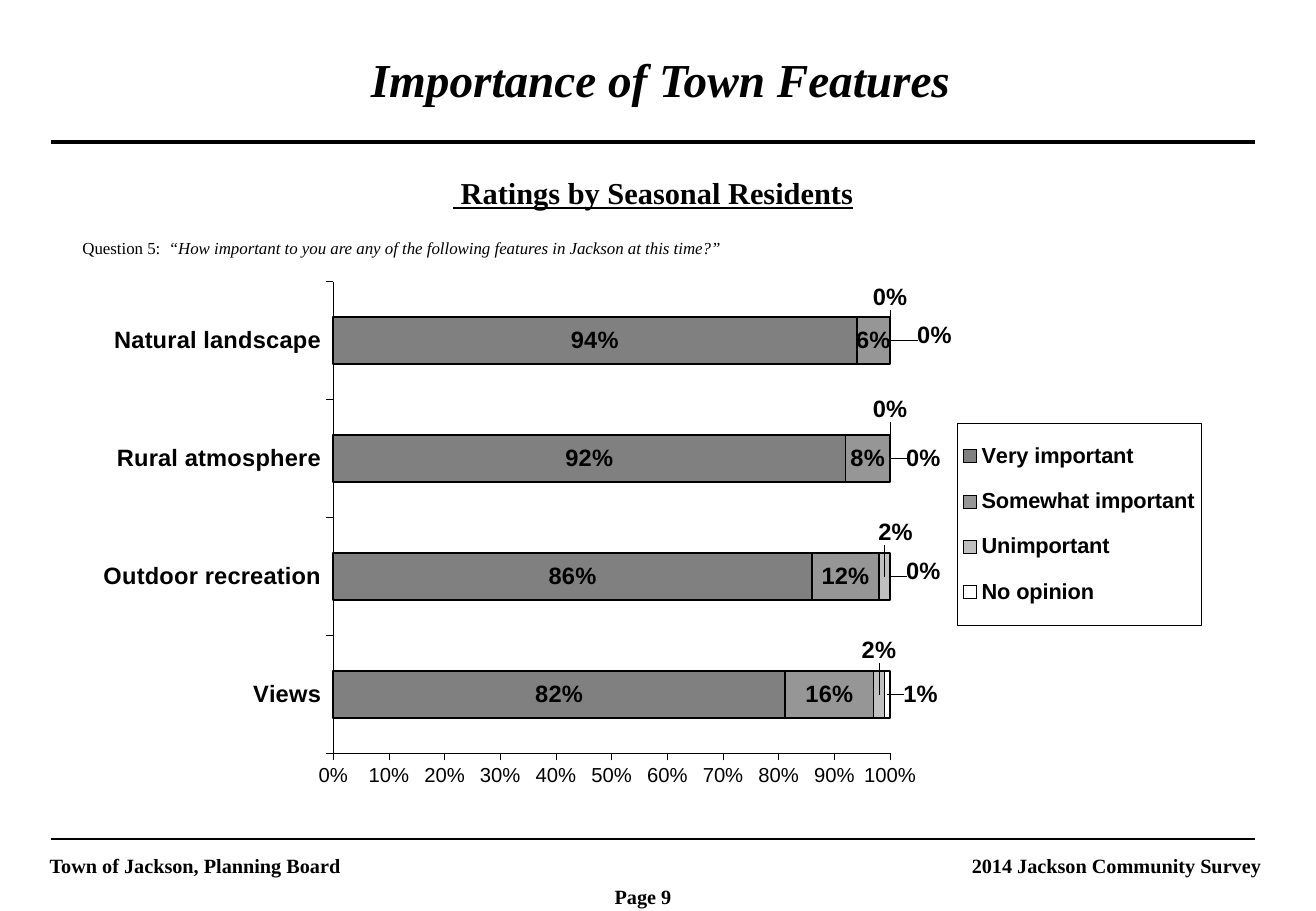
from lxml import etree
from pptx import Presentation
from pptx.chart.data import CategoryChartData
from pptx.dml.color import RGBColor
from pptx.enum.chart import XL_CHART_TYPE, XL_LEGEND_POSITION, XL_TICK_MARK
from pptx.enum.shapes import MSO_CONNECTOR
from pptx.enum.text import PP_ALIGN
from pptx.oxml import parse_xml
from pptx.oxml.ns import qn
from pptx.util import Inches, Pt

BLACK = RGBColor(0, 0, 0)
STACKED_BAR = XL_CHART_TYPE.BAR_STACKED_100
LEGEND_RIGHT = XL_LEGEND_POSITION.RIGHT
TICK_OUTSIDE, TICK_NONE = XL_TICK_MARK.OUTSIDE, XL_TICK_MARK.NONE
STRAIGHT = MSO_CONNECTOR.STRAIGHT
LEFT, CENTER, RIGHT = PP_ALIGN.LEFT, PP_ALIGN.CENTER, PP_ALIGN.RIGHT
SERIF, SANS = "Times New Roman", "Arial"
CHART_NAMESPACE = "http://schemas.openxmlformats.org/drawingml/2006/chart"

FEATURES = ["Views", "Outdoor recreation", "Rural atmosphere", "Natural landscape"]
# name, shares, fill, label offsets as fractions of the chart (none: centred)
RATINGS = [
    ("Very important", (0.82, 0.86, 0.92, 0.94), RGBColor(0x80, 0x80, 0x80), ()),
    ("Somewhat important", (0.16, 0.12, 0.08, 0.06), RGBColor(0x96, 0x96, 0x96), ()),
    ("Unimportant", (0.02, 0.02, 0, 0), RGBColor(0xC0, 0xC0, 0xC0),
     ((0, -0.08), (0.01, -0.08), (0, -0.09), (0, -0.08))),
    ("No opinion", (0.01, 0, 0, 0), RGBColor(0xFF, 0xFF, 0xFF),
     ((0.03, 0), (0.03, -0.01), (0.03, 0), (0.04, -0.01))),
]


def style_font(font, name, size, bold=False, italic=False):
    font.name, font.size = name, Pt(size)
    font.bold, font.italic = bold, italic
    font.color.rgb = BLACK


def add_text(slide, box, text, size, align=LEFT, bold=True, italic=False):
    shape = slide.shapes.add_textbox(*map(Inches, box))
    shape.text_frame.word_wrap = True
    paragraph = shape.text_frame.paragraphs[0]
    paragraph.text = text
    paragraph.alignment, paragraph.line_spacing = align, 0.9
    style_font(paragraph.runs[0].font, SERIF, size, bold, italic)
    return paragraph


def add_rule(slide, left, top, width, weight):
    rule = slide.shapes.add_connector(
        STRAIGHT, Inches(left), Inches(top), Inches(left + width), Inches(top))
    rule.line.color.rgb, rule.line.width = BLACK, Pt(weight)
    etree.SubElement(rule._element.spPr, qn("a:effectLst"))


def add_header(slide, left, top, width):
    add_text(slide, (left + 0.06, top, width, 0.52), "Importance of Town Features",
             28, CENTER, italic=True)
    add_rule(slide, left, top + 0.75, width, 2)
    subtitle = add_text(slide, (left, top + 1, width, 0.37),
                        " Ratings by Seasonal Residents", 18, CENTER)
    subtitle.runs[0].font.underline = True
    question = add_text(slide, (left + 0.16, top + 1.51, 9.08, 0.25),
                        "Question 5:  ", 10, bold=False)
    quote = question.add_run()
    quote.text = "“How important to you are any of the following features in Jackson at this time?”"
    style_font(quote.font, SERIF, 10, italic=True)


def add_footer(slide, left, top, width):
    add_rule(slide, left, top, width, 1)
    add_text(slide, (left - 0.11, top + 0.09, 3.92, 0.28),
             "Town of Jackson, Planning Board", 12)
    add_text(slide, (left + width - 3.52, top + 0.09, 3.67, 0.28),
             "2014 Jackson Community Survey", 12, RIGHT)
    add_text(slide, (left + 4.54, top + 0.34, 0.92, 0.28), "Page 9", 12)


def manual_layout(x, y, width=None, height=None, inner=False, from_edge=True):
    """Return a c:layout whose lengths are fractions of the chart."""
    parts = [("layoutTarget", "inner")] if inner else []
    if from_edge:
        parts += [("xMode", "edge"), ("yMode", "edge")]
    parts += [("x", x), ("y", y)]
    if width:
        parts += [("w", width), ("h", height)]
    body = "".join(f'<c:{name} val="{value}"/>' for name, value in parts)
    return parse_xml(f'<c:layout xmlns:c="{CHART_NAMESPACE}">'
                     f"<c:manualLayout>{body}</c:manualLayout></c:layout>")


def style_axis(axis, size, bold):
    axis.has_major_gridlines = False
    axis.major_tick_mark, axis.minor_tick_mark = TICK_OUTSIDE, TICK_NONE
    axis.format.line.color.rgb, axis.format.line.width = BLACK, Pt(0.25)
    style_font(axis.tick_labels.font, SANS, size, bold)


def style_series(series, fill, offsets):
    series.format.fill.solid()
    series.format.fill.fore_color.rgb = fill
    series.format.line.color.rgb, series.format.line.width = BLACK, Pt(1)
    labels = series.data_labels
    labels.show_value = True
    labels.number_format, labels.number_format_is_linked = "0%", False
    style_font(labels.font, SANS, 14, True)
    for index, offset in enumerate(offsets):
        style_font(series.points[index].data_label.font, SANS, 14, True)
        label = series._element.xpath(f"c:dLbls/c:dLbl[c:idx/@val={index}]")[0]
        label.insert(1, manual_layout(*offset, from_edge=False))


def style_legend(chart):
    chart.has_legend = True
    legend = chart.legend
    legend.position, legend.include_in_layout = LEGEND_RIGHT, False
    style_font(legend.font, SANS, 12.9, True)
    element = legend._element
    for layout in element.findall(qn("c:layout")):
        element.remove(layout)
    element.find(qn("c:legendPos")).addnext(manual_layout(0.77, 0.3, 0.22, 0.37))
    border = parse_xml(
        f'<c:spPr xmlns:c="{CHART_NAMESPACE}" '
        'xmlns:a="http://schemas.openxmlformats.org/drawingml/2006/main">'
        f'<a:ln w="{Pt(0.25)}"><a:solidFill><a:srgbClr val="{BLACK}"/>'
        "</a:solidFill></a:ln></c:spPr>")
    element.find(qn("c:txPr")).addprevious(border)


def add_ratings_chart(slide, box):
    data = CategoryChartData(number_format="0%")
    data.categories = FEATURES
    for name, shares, _, _ in RATINGS:
        data.add_series(name, shares)
    chart = slide.shapes.add_chart(STACKED_BAR, *map(Inches, box), data).chart
    chart.has_title = False
    style_font(chart.font, SANS, 18, True)
    style_axis(chart.category_axis, 14, True)
    style_axis(chart.value_axis, 12, False)
    chart.value_axis.minimum_scale, chart.value_axis.maximum_scale = 0, 1
    chart.value_axis.major_unit = 0.1
    labels = chart.value_axis.tick_labels
    labels.number_format, labels.number_format_is_linked = "0%", False
    plot = chart.plots[0]
    plot.gap_width, plot.overlap, plot.vary_by_categories = 150, 100, False
    for series, (_, _, fill, offsets) in zip(plot.series, RATINGS):
        style_series(series, fill, offsets)
    style_legend(chart)
    plot_area = chart._chartSpace.chart.plotArea
    for layout in plot_area.findall(qn("c:layout")):
        plot_area.remove(layout)
    plot_area.insert(0, manual_layout(0.209, 0.042, 0.501, 0.861, inner=True))


def main():
    presentation = Presentation()
    presentation.slide_width, presentation.slide_height = Inches(10.83), Inches(7.5)
    slide = presentation.slides.add_slide(presentation.slide_layouts[6])
    add_header(slide, 0.42, 0.42, 9.91)
    add_ratings_chart(slide, (0.83, 2.13, 9.15, 4.51))
    add_footer(slide, 0.42, 6.91, 9.91)
    presentation.save("out.pptx")


if __name__ == "__main__":
    main()
